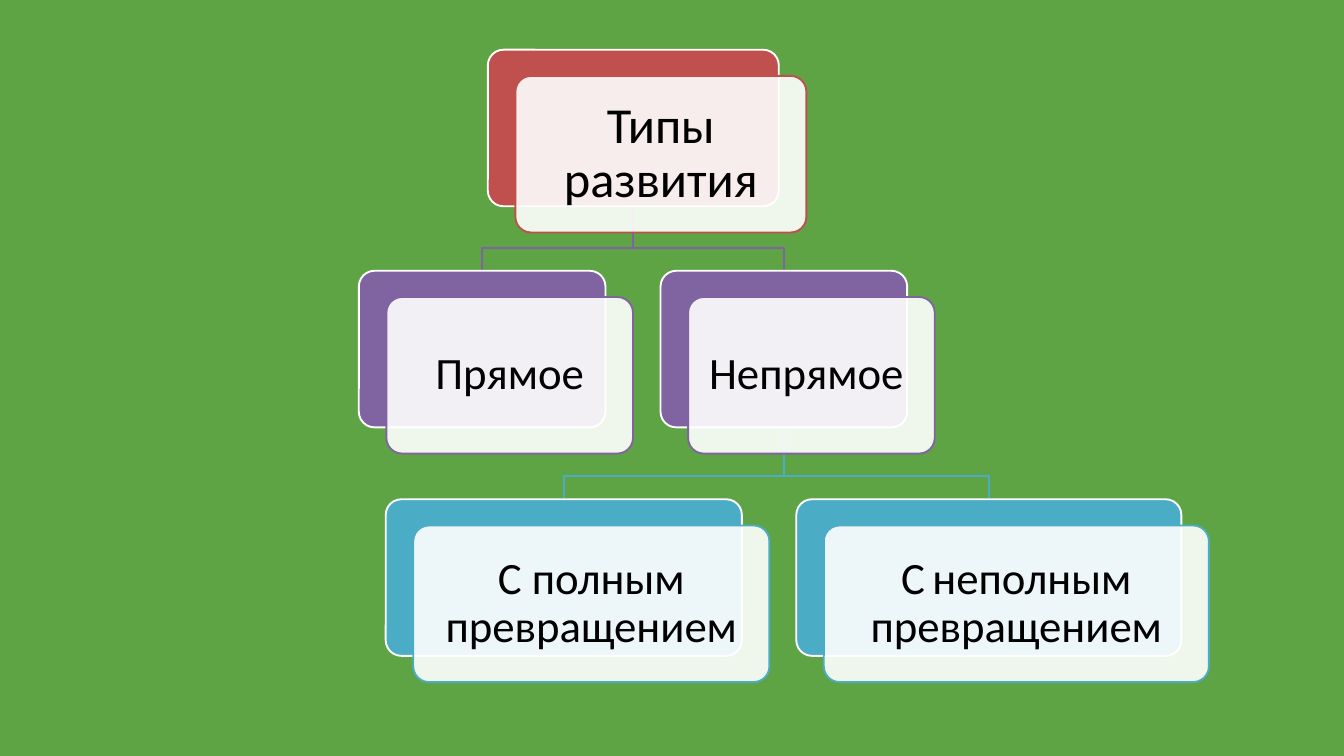
from lxml.etree import SubElement
from pptx import Presentation
from pptx.dml.color import RGBColor
from pptx.enum.shapes import MSO_SHAPE as SHAPE
from pptx.enum.text import MSO_ANCHOR as ANCHOR, PP_ALIGN as ALIGN
from pptx.oxml.ns import qn
from pptx.util import Inches, Pt

GREEN = RGBColor(0x5E, 0xA4, 0x45)
RED = RGBColor(0xC0, 0x50, 0x4D)
PURPLE = RGBColor(0x80, 0x64, 0xA2)
TEAL = RGBColor(0x4B, 0xAC, 0xC6)
WHITE = RGBColor(0xFF, 0xFF, 0xFF)
BLACK = RGBColor(0, 0, 0)

LEVELS = [
    {"top": 0.74, "color": RED, "size": 54, "inset": 0.23},
    {"top": 4.03, "color": PURPLE, "size": 48, "inset": 0.2},
    {"top": 7.43, "color": TEAL, "size": 48, "inset": 0.2},
]
# name: (level, parent, left, width, runs with their own size or None)
NODES = {
    "types": (0, None, 7.26, 4.33, [("Типы развития", None)]),
    "direct": (1, "types", 5.34, 3.67, [("Прямое", None)]),
    "indirect": (1, "types", 9.83, 3.67, [("Непрямое ", None)]),
    "complete": (2, "indirect", 5.74, 5.3, [("С полным превращением", None)]),
    "incomplete": (2, "indirect", 11.85, 5.73,
                   [("С", None), (" ", 35), ("неполным превращением", None)]),
}
CARD_HEIGHT = 2.33
SHIFT_X, SHIFT_Y = 0.41, 0.39
BEND_GAP = 0.34
LINE_WIDTH = Pt(2)


def add_branch(slide, parent, child):
    parent_level, _, parent_left, parent_width, _ = NODES[parent]
    child_level, _, child_left, child_width, _ = NODES[child]
    start_x = parent_left + parent_width / 2
    start_y = LEVELS[parent_level]["top"] + CARD_HEIGHT
    end_x = child_left + child_width / 2
    end_y = LEVELS[child_level]["top"]
    bend_y = end_y - BEND_GAP
    corners = [(start_x, bend_y), (end_x, bend_y), (end_x, end_y)]
    builder = slide.shapes.build_freeform(Inches(start_x), Inches(start_y))
    builder.add_line_segments([(Inches(x), Inches(y)) for x, y in corners], close=False)
    branch = builder.convert_to_shape()
    branch.shadow.inherit = False
    branch.fill.background()
    branch.line.color.rgb = LEVELS[child_level]["color"]
    branch.line.width = LINE_WIDTH


def add_card(slide, left, top, width, fill, line):
    card = slide.shapes.add_shape(SHAPE.ROUNDED_RECTANGLE, Inches(left), Inches(top),
                                  Inches(width), Inches(CARD_HEIGHT))
    card.adjustments[0] = 0.1
    card.shadow.inherit = False
    card.fill.solid()
    card.fill.fore_color.rgb = fill
    card.line.color.rgb = line
    card.line.width = LINE_WIDTH
    return card


def add_label(card, runs, size, inset):
    frame = card.text_frame
    frame.word_wrap = True
    frame.vertical_anchor = ANCHOR.MIDDLE
    frame.margin_left = frame.margin_right = Inches(inset)
    frame.margin_top = frame.margin_bottom = Inches(inset)
    label = frame.paragraphs[0]
    label.alignment = ALIGN.CENTER
    label.line_spacing = 0.9
    label.font.name = "Calibri"
    label.font.size = Pt(size)
    label.font.color.rgb = BLACK
    for text, own_size in runs:
        run = label.add_run()
        run.text = text
        if own_size:
            run.font.size = Pt(own_size)


def add_node(slide, level, left, width, runs):
    style = LEVELS[level]
    add_card(slide, left, style["top"], width, style["color"], WHITE)
    front = add_card(slide, left + SHIFT_X, style["top"] + SHIFT_Y, width,
                     WHITE, style["color"])
    white = front.fill._xPr.find(qn("a:solidFill"))[0]
    SubElement(white, qn("a:alpha"), val="90000")
    add_label(front, runs, style["size"], style["inset"])


def main():
    deck = Presentation()
    deck.slide_width, deck.slide_height = Inches(20), Inches(11.25)
    slide = deck.slides.add_slide(deck.slide_layouts[6])

    backdrop = slide.shapes.add_shape(SHAPE.RECTANGLE, 0, 0,
                                      deck.slide_width, deck.slide_height)
    backdrop.shadow.inherit = False
    backdrop.fill.solid()
    backdrop.fill.fore_color.rgb = GREEN
    backdrop.line.fill.background()

    for name, (_, parent, *_) in NODES.items():
        if parent:
            add_branch(slide, parent, name)
    for level, _, left, width, runs in NODES.values():
        add_node(slide, level, left, width, runs)

    deck.save("out.pptx")


if __name__ == "__main__":
    main()
